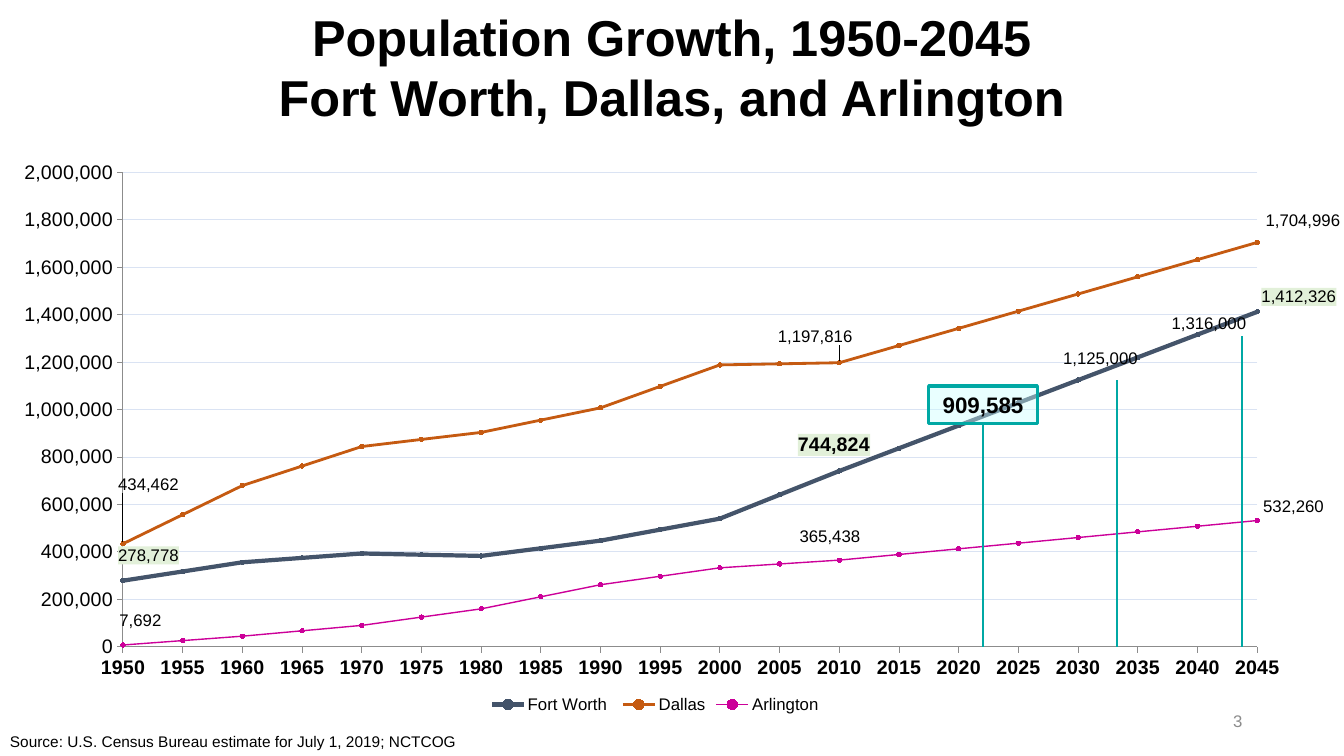
from lxml.etree import SubElement
from pptx import Presentation
from pptx.chart.data import CategoryChartData
from pptx.dml.color import RGBColor
from pptx.enum.chart import (XL_CHART_TYPE, XL_LABEL_POSITION, XL_LEGEND_POSITION,
                             XL_MARKER_STYLE, XL_TICK_MARK)
from pptx.enum.shapes import MSO_CONNECTOR, MSO_SHAPE
from pptx.enum.text import MSO_ANCHOR, PP_ALIGN
from pptx.oxml import parse_xml
from pptx.oxml.ns import nsdecls, qn
from pptx.util import Inches, Pt

BLACK = RGBColor(0x00, 0x00, 0x00)
GRAY = RGBColor(0x8C, 0x8C, 0x8C)
GRID = RGBColor(0xDA, 0xE3, 0xF3)
SLATE = RGBColor(0x44, 0x54, 0x6A)
ORANGE = RGBColor(0xC5, 0x5A, 0x11)
MAGENTA = RGBColor(0xCC, 0x00, 0x99)
TEAL = RGBColor(0x00, 0xA8, 0xA4)
AQUA = RGBColor(0xCC, 0xFF, 0xFF)
PALE_GREEN = RGBColor(0xE2, 0xF0, 0xD9)
FONT = "Arial"
WIDTH, HEIGHT = 13.33, 7.5
CHART_BOX = (0, 1.48, WIDTH, 5.65)
PLOT = (0.0915, 0.041, 0.844, 0.833)  # shares of the chart box

YEARS = [str(year) for year in range(1950, 2050, 5)]
# name, colour, line width, label fill, values, {point: label offset as chart shares}
CITIES = [
    ("Fort Worth ", SLATE, 3, PALE_GREEN,
     [278778, 317523, 356268, 374862, 393455, 388311, 383166, 415393, 447619, 494005,
      540391, 640799, 741206, 837080, 932955, 1028829, 1124703, 1220577, 1316452, 1412326],
     {0: (0.019, -0.018), 12: (-0.004, -0.016), 19: (0.031, 0)}),
    ("Dallas", ORANGE, 2, None,
     [434462, 557073, 679684, 762043, 844401, 874240, 904078, 955848, 1007618, 1098099,
      1188580, 1193198, 1197816, 1270270, 1342725, 1415179, 1487633, 1560087, 1632542, 1704996],
     {0: (0.019, -0.077), 12: (-0.018, -0.019), 19: (0.034, -0.012)}),
    ("Arlington", MAGENTA, 1, None,
     [7692, 26234, 44775, 67502, 90229, 125171, 160113, 210915, 261717, 297343,
      332969, 349204, 365438, 389270, 413101, 436933, 460765, 484597, 508428, 532260],
     {0: (0.013, -0.016), 12: (-0.007, -0.014), 19: (0.027, 0.002)}),
]
REPLACED_LABELS = {("Fort Worth ", 12): "744,824"}


def style(font, size, color=BLACK, bold=False):
    font.name, font.size, font.bold = FONT, Pt(size), bold
    font.color.rgb = color


def write(frame, lines, size, align=PP_ALIGN.LEFT, color=BLACK, bold=False):
    frame.word_wrap = True
    for i, line in enumerate(lines):
        paragraph = frame.add_paragraph() if i else frame.paragraphs[0]
        paragraph.alignment = align
        run = paragraph.add_run()
        run.text = line
        style(run.font, size, color, bold)


def add_text(slide, box, text, size, align=PP_ALIGN.LEFT, color=BLACK,
             anchor=MSO_ANCHOR.TOP):
    frame = slide.shapes.add_textbox(*map(Inches, box)).text_frame
    frame.vertical_anchor = anchor
    write(frame, [text], size, align, color)


def manual_layout(**settings):
    layout = parse_xml(f"<c:layout {nsdecls('c')}/>")
    manual = SubElement(layout, qn("c:manualLayout"))
    for tag, value in settings.items():
        SubElement(manual, qn(f"c:{tag}")).set("val", str(value))
    return layout


def add_title(slide, box):
    title = slide.shapes.title
    title.left, title.top, title.width, title.height = map(Inches, box)
    title.text_frame.vertical_anchor = MSO_ANCHOR.TOP
    write(title.text_frame, ["Population Growth, 1950-2045",
                             "Fort Worth, Dallas, and Arlington"],
          36, PP_ALIGN.CENTER, bold=True)


def label_point(series, index, offset, fill):
    label = series.points[index].data_label
    replacement = REPLACED_LABELS.get((series.name, index))
    if replacement:
        write(label.text_frame, [replacement], 14, PP_ALIGN.CENTER, bold=True)
    else:
        style(label.font, 12)
    label.position = XL_LABEL_POSITION.ABOVE
    element = next(e for e in series.data_labels._element.findall(qn("c:dLbl"))
                   if e.find(qn("c:idx")).get("val") == str(index))
    element.find(qn("c:idx")).addnext(manual_layout(x=offset[0], y=offset[1]))
    for old in element.findall(qn("c:spPr")):
        element.remove(old)
    if fill is not None:
        following = element.find(qn("c:txPr"))
        if following is None:
            following = element.find(qn("c:dLblPos"))
        following.addprevious(parse_xml(
            f'<c:spPr {nsdecls("c", "a")}><a:solidFill><a:srgbClr val="{fill}"/>'
            "</a:solidFill></c:spPr>"))


def format_axes(chart):
    for axis, bold in ((chart.category_axis, True), (chart.value_axis, False)):
        style(axis.tick_labels.font, 14, bold=bold)
        axis.major_tick_mark = XL_TICK_MARK.OUTSIDE
        axis.minor_tick_mark = XL_TICK_MARK.NONE
        axis.format.line.color.rgb = GRAY
        axis.format.line.width = Pt(0.75)
    population = chart.value_axis
    population.minimum_scale, population.maximum_scale = 0, 2000000
    population.major_unit = 200000
    population.tick_labels.number_format = "#,##0"
    population.tick_labels.number_format_is_linked = False
    population.major_gridlines.format.line.color.rgb = GRID
    population.major_gridlines.format.line.width = Pt(0.75)
    # The first and last years sit on the plot's edges
    population._element.find(qn("c:majorUnit")).addprevious(
        parse_xml(f'<c:crossBetween {nsdecls("c")} val="midCat"/>'))


def add_population_chart(slide, box):
    data = CategoryChartData(number_format="#,##0")
    data.categories = YEARS
    for name, _, _, _, values, _ in CITIES:
        data.add_series(name, values)
    chart = slide.shapes.add_chart(XL_CHART_TYPE.LINE_MARKERS,
                                   *map(Inches, box), data).chart
    style(chart.font, 12)
    chart.has_title = False
    format_axes(chart)

    # Plot area and legend
    left, top, width, height = PLOT
    area = chart._chartSpace.chart.plotArea
    for old in area.findall(qn("c:layout")):
        area.remove(old)
    area.insert(0, manual_layout(layoutTarget="inner", xMode="edge", yMode="edge",
                                 x=left, y=top, w=width, h=height))
    chart.has_legend = True
    legend = chart.legend
    legend.position = XL_LEGEND_POSITION.BOTTOM
    legend.include_in_layout = False
    style(legend.font, 12)
    for old in legend._element.findall(qn("c:layout")):
        legend._element.remove(old)
    legend._element.find(qn("c:legendPos")).addnext(
        manual_layout(xMode="edge", yMode="edge", x=0.362, y=0.957))

    # City lines
    chart.plots[0].vary_by_categories = False
    for series, (_, color, line_width, fill, _, offsets) in zip(chart.plots[0].series, CITIES):
        series.smooth = False
        series.format.line.color.rgb = color
        series.format.line.width = Pt(line_width)
        series.marker.style, series.marker.size = XL_MARKER_STYLE.CIRCLE, 3
        series.marker.format.fill.solid()
        series.marker.format.fill.fore_color.rgb = color
        series.marker.format.line.fill.background()
        series.data_labels.show_value = False
        for index, offset in offsets.items():
            label_point(series, index, offset, fill)


def add_markers(slide, box):
    baseline = box[1] + box[3] * (PLOT[1] + PLOT[3])
    for x, top in ((9.75, 4.2), (11.08, 3.77), (12.32, 3.33)):
        stem = slide.shapes.add_connector(MSO_CONNECTOR.STRAIGHT, *map(
            Inches, (x, baseline, x, top)))
        stem.line.color.rgb, stem.line.width = TEAL, Pt(1.5)
        SubElement(stem._element.spPr, qn("a:effectLst"))

    # Boxed current estimate
    estimate = slide.shapes.add_shape(MSO_SHAPE.RECTANGLE,
                                      *map(Inches, (9.21, 3.83, 1.08, 0.37)))
    estimate.shadow.inherit = False
    estimate.fill.solid()
    estimate.fill.fore_color.rgb = AQUA
    fill_color = estimate._element.spPr.find(qn("a:solidFill"))[0]
    SubElement(fill_color, qn("a:alpha")).set("val", "42000")
    estimate.line.color.rgb, estimate.line.width = TEAL, Pt(2.25)
    estimate.text_frame.vertical_anchor = MSO_ANCHOR.MIDDLE
    write(estimate.text_frame, ["909,585"], 16, PP_ALIGN.CENTER, bold=True)

    # Projections
    add_text(slide, (10.31, 3.4, 1.21, 0.3), "1,125,000", 12, PP_ALIGN.CENTER)
    add_text(slide, (11.38, 3.05, 1.22, 0.3), "1,316,000", 12, PP_ALIGN.CENTER)


def add_footer(slide):
    add_text(slide, (0, 7.21, 7.02, 0.29),
             "Source: U.S. Census Bureau estimate for July 1, 2019; NCTCOG", 11)
    add_text(slide, (9.42, 6.95, 3, 0.4), "3", 12, PP_ALIGN.RIGHT, GRAY, MSO_ANCHOR.MIDDLE)


def main():
    deck = Presentation()
    deck.slide_width, deck.slide_height = Inches(WIDTH), Inches(HEIGHT)
    slide = deck.slides.add_slide(deck.slide_layouts[5])
    add_title(slide, (0, 0.01, WIDTH, 1.31))
    add_population_chart(slide, CHART_BOX)
    add_markers(slide, CHART_BOX)
    add_footer(slide)
    deck.save("out.pptx")


if __name__ == "__main__":
    main()
